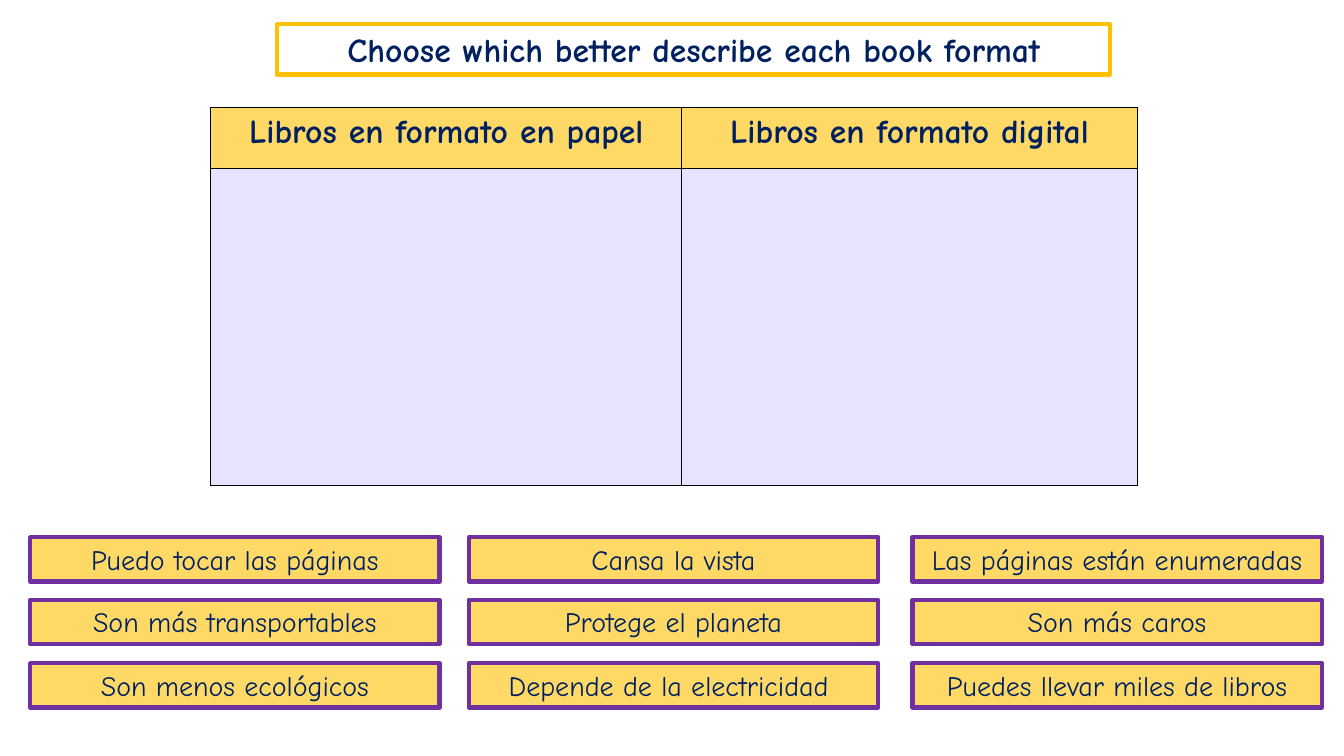
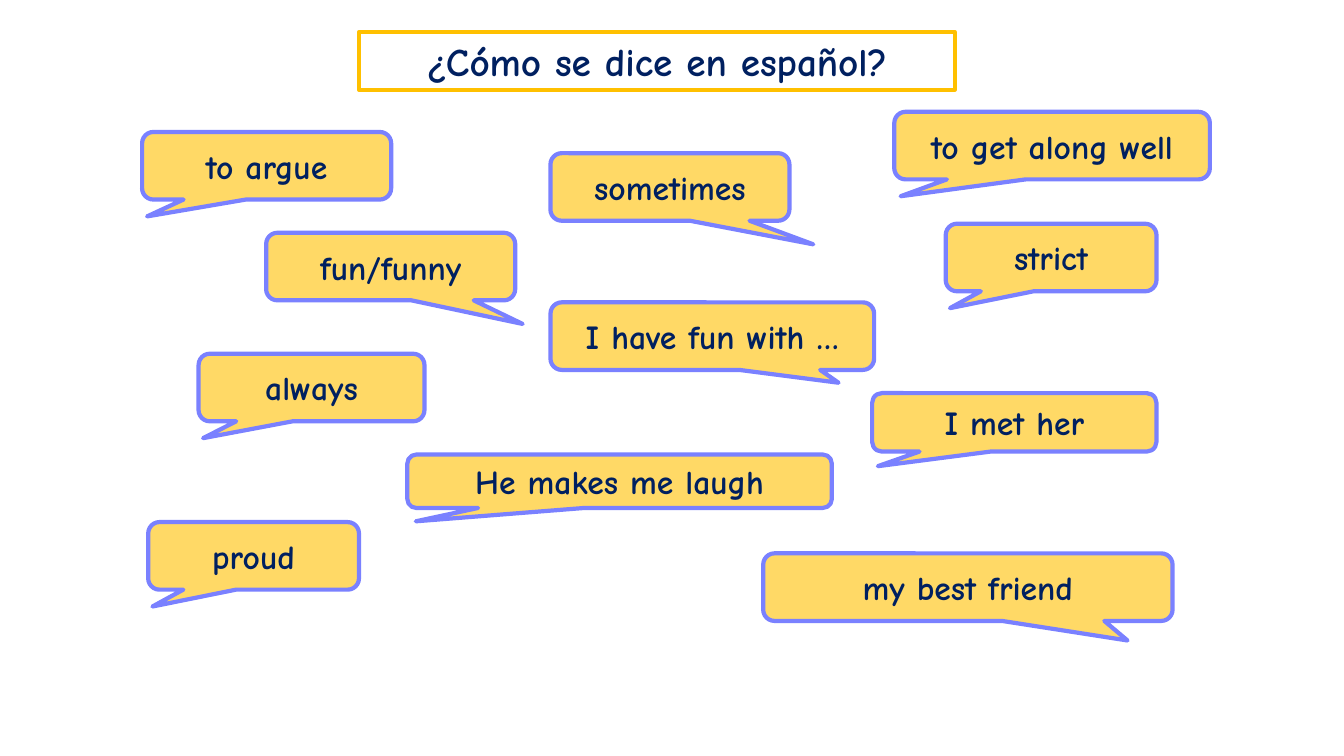
"""Build two Spanish lesson slides: a sorting table and a vocabulary board."""
from lxml.etree import SubElement
from pptx import Presentation
from pptx.dml.color import RGBColor
from pptx.enum.shapes import MSO_SHAPE as Preset
from pptx.enum.text import MSO_ANCHOR as Anchor, MSO_AUTO_SIZE as AutoSize, PP_ALIGN as Align
from pptx.oxml.ns import qn
from pptx.util import Inches, Pt

COLORS = {
    "white": "FFFFFF", "black": "000000", "navy": "002060", "yellow": "FFD966",
    "gold": "FFC000", "purple": "7030A0", "violet": "7A81FF", "lavender": "E7E3FF",
}
FONT = "Comic Neue"

SORT_TITLE = "Choose which better describe each book format"
FORMATS = ["Libros en formato en papel", "Libros en formato digital"]
COLUMN_WIDTHS = [4.67, 4.52]
ROW_HEIGHTS = [0.6, 3.15]
STATEMENTS = [
    ["Puedo tocar las páginas", "Cansa la vista", "Las páginas están enumeradas"],
    ["Son más transportables", "Protege el planeta", "Son más caros"],
    ["Son menos ecológicos", "Depende de la electricidad ", "Puedes llevar miles de libros"],
]
STATEMENT_LEFTS = [0.3, 4.65, 9.05]
STATEMENT_TOPS = [5.33, 5.95, 6.58]
STATEMENT_SIZE = (4.06, 0.44)

VOCABULARY_TITLE = "¿Cómo se dice en español?"
LEFT_TAIL = (-0.48, 0.75)
BUBBLES = [
    ("to argue", (1.41, 1.31, 2.47, 0.67), LEFT_TAIL),
    ("sometimes", (5.46, 1.52, 2.37, 0.67), (0.6, 0.85)),
    ("fun/funny", (2.64, 2.31, 2.47, 0.67), (0.53, 0.85)),
    ("to get along well", (8.87, 1.11, 3.13, 0.67), LEFT_TAIL),
    ("always", (1.97, 3.51, 2.24, 0.67), LEFT_TAIL),
    ("strict", (9.38, 2.22, 2.09, 0.67), LEFT_TAIL),
    ("I have fun with …", (5.46, 3, 3.21, 0.67), (0.39, 0.69)),
    ("I met her", (8.65, 3.9, 2.82, 0.58), LEFT_TAIL),
    ("He makes me laugh", (4.04, 4.51, 4.21, 0.53), LEFT_TAIL),
    ("my best friend", (7.57, 5.49, 4.06, 0.67), (0.39, 0.79)),
    ("proud", (1.47, 5.18, 2.09, 0.67), LEFT_TAIL),
]


def color(name):
    return RGBColor.from_string(COLORS[name])


def write(frame, text, size, bold=True):
    para = frame.paragraphs[0]
    para.alignment = Align.CENTER
    span = para.add_run()
    span.text = text
    font_format = {"name": FONT, "size": Pt(size), "bold": bold}
    for attribute, value in font_format.items():
        setattr(span.font, attribute, value)
    span.font.color.rgb = color("navy")


def add_box(page, text, place, fill, line, size=24, bold=True, preset=Preset.RECTANGLE):
    box = page.shapes.add_shape(preset, *map(Inches, place))
    box.shadow.inherit = False
    box.fill.solid()
    box.fill.fore_color.rgb = color(fill)
    box.line.color.rgb = color(line)
    box.line.width = Pt(3)
    grows = preset == Preset.RECTANGLE
    frame_format = {
        "word_wrap": True,
        "auto_size": AutoSize.SHAPE_TO_FIT_TEXT if grows else AutoSize.NONE,
        "vertical_anchor": Anchor.TOP if grows else Anchor.MIDDLE,
    }
    for attribute, value in frame_format.items():
        setattr(box.text_frame, attribute, value)
    write(box.text_frame, text, size, bold)
    return box


def add_title(page, text, place, size):
    add_box(page, text, place, "white", "gold", size)


def style_cell(cell, fill):
    properties = cell._tc.get_or_add_tcPr()
    for side in ("lnL", "lnR", "lnT", "lnB"):
        border = SubElement(properties, qn(f"a:{side}"), w=str(Pt(1)))
        solid = SubElement(border, qn("a:solidFill"))
        SubElement(solid, qn("a:srgbClr"), val=COLORS["black"])
    cell.fill.solid()
    cell.fill.fore_color.rgb = color(fill)


def add_sorting_table(page):
    place = (2.09, 1.07, sum(COLUMN_WIDTHS), sum(ROW_HEIGHTS))
    table = page.shapes.add_table(2, 2, *map(Inches, place)).table
    table.first_row = table.horz_banding = False
    for row, height in zip(table.rows, ROW_HEIGHTS):
        row.height = Inches(height)
    for index, (text, width) in enumerate(zip(FORMATS, COLUMN_WIDTHS)):
        table.columns[index].width = Inches(width)
        style_cell(table.cell(0, index), "yellow")
        style_cell(table.cell(1, index), "lavender")
        write(table.cell(0, index).text_frame, text, 24)


def build_sorting(page):
    add_sorting_table(page)
    for top, statements in zip(STATEMENT_TOPS, STATEMENTS):
        for left, text in zip(STATEMENT_LEFTS, statements):
            add_box(page, text, (left, top, *STATEMENT_SIZE), "yellow", "purple", 20, False)
    add_title(page, SORT_TITLE, (2.75, 0.24, 8.26, 0.5), 24)


def build_vocabulary(page):
    for text, place, tail in BUBBLES:
        bubble = add_box(page, text, place, "yellow", "violet",
                         preset=Preset.ROUNDED_RECTANGULAR_CALLOUT)
        for index, value in enumerate(tail):
            bubble.adjustments[index] = value
    add_title(page, VOCABULARY_TITLE, (3.56, 0.32, 5.91, 0.57), 28)


def main():
    deck = Presentation()
    deck.slide_width, deck.slide_height = Inches(13.33), Inches(7.5)
    for build in (build_sorting, build_vocabulary):
        build(deck.slides.add_slide(deck.slide_layouts[6]))
    deck.save("out.pptx")


if __name__ == "__main__":
    main()
